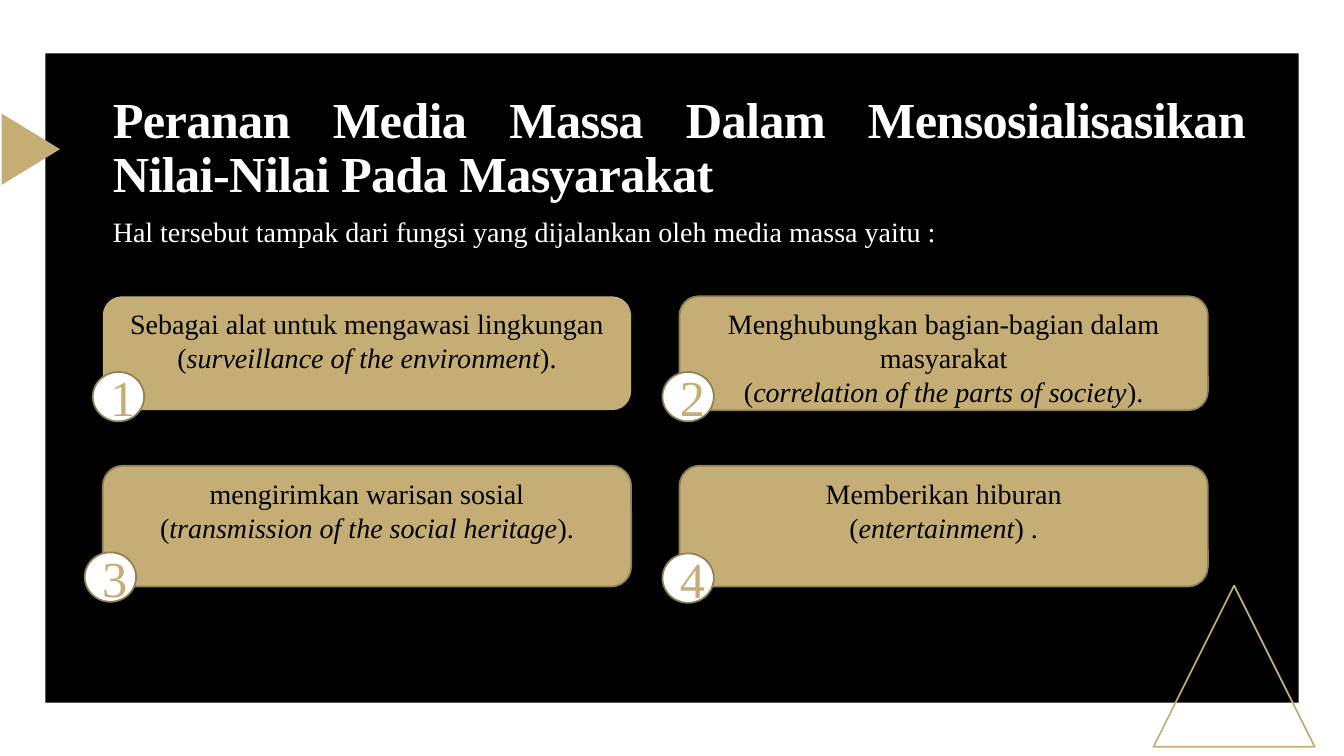
from pptx import Presentation
from pptx.dml.color import RGBColor
from pptx.enum.shapes import MSO_SHAPE
from pptx.enum.text import MSO_ANCHOR, MSO_AUTO_SIZE, PP_ALIGN
from pptx.util import Pt

PX = 9144  # 100 px to the inch
GOLD, DARK_GOLD, WHITE, BLACK = "C4AE75", "918157", "FFFFFF", "000000"


def add_shape(kind, left, top, width, height, fill=None, line=None):
    shape = slide.shapes.add_shape(kind, left * PX, top * PX, width * PX, height * PX)
    shape.shadow.inherit = False
    if fill:
        shape.fill.solid()
        shape.fill.fore_color.rgb = RGBColor.from_string(fill)
    else:
        shape.fill.background()
    if line:
        shape.line.color.rgb = RGBColor.from_string(line)
        shape.line.width = Pt(1.25)
    else:
        shape.line.fill.background()
    return shape


def write_text(shape, *lines, size=20, color=BLACK, bold=False, spacing=0,
               align=PP_ALIGN.CENTER, anchor=MSO_ANCHOR.TOP):
    """Write one paragraph per line; text between asterisks is italic."""
    frame = shape.text_frame
    frame.word_wrap = True
    frame.auto_size = MSO_AUTO_SIZE.NONE
    frame.vertical_anchor = anchor
    for index, line in enumerate(lines):
        paragraph = frame.add_paragraph() if index else frame.paragraphs[0]
        paragraph.alignment = align
        for part, text in enumerate(line.split("*")):
            run = paragraph.add_run()
            run.text = text
            run.font.name = "Times New Roman"
            run.font.size = Pt(size)
            run.font.bold = bold
            run.font.italic = part % 2 == 1
            run.font.color.rgb = RGBColor.from_string(color)
            if spacing:
                run.font._element.set("spc", str(spacing))


presentation = Presentation()
presentation.slide_width = 1333 * PX
presentation.slide_height = 750 * PX
slide = presentation.slides.add_slide(presentation.slide_layouts[5])

# Panel and triangles
add_shape(MSO_SHAPE.RECTANGLE, 45, 53, 1243, 644, fill=BLACK)
add_shape(MSO_SHAPE.ISOSCELES_TRIANGLE, 1144, 581, 160, 160, line=GOLD)
pointer = add_shape(MSO_SHAPE.ISOSCELES_TRIANGLE, -5, 119, 71, 58, fill=GOLD)
pointer.rotation = 90

# Title, brought in front of the panel
title = slide.shapes.title
slide.shapes._spTree.append(title._element)
title.left, title.top, title.width, title.height = 102 * PX, 98 * PX, 1143 * PX, 100 * PX
write_text(title, "Peranan Media Massa Dalam Mensosialisasikan Nilai-Nilai Pada Masyarakat",
           size=36, color=WHITE, bold=True, spacing=-50,
           align=PP_ALIGN.JUSTIFY, anchor=MSO_ANCHOR.MIDDLE)
title.text_frame.paragraphs[0].line_spacing = 0.9

introduction = slide.shapes.add_textbox(102 * PX, 208 * PX, 842 * PX, 44 * PX)
write_text(introduction, "Hal tersebut tampak dari fungsi yang dijalankan oleh media massa yaitu :",
           color=WHITE, align=PP_ALIGN.JUSTIFY)

# Four functions: text lines, card outline, badge position
functions = [
    (["Sebagai alat untuk mengawasi lingkungan (*surveillance of the environment*)."],
     None, (92, 369)),
    (["Menghubungkan bagian-bagian dalam masyarakat",
      "(*correlation of the parts of society*)."], DARK_GOLD, (657, 369)),
    (["mengirimkan warisan sosial", "(*transmission of the social heritage*)."],
     DARK_GOLD, (84, 548)),
    (["Memberikan hiburan", "(*entertainment*) ."], DARK_GOLD, (657, 549)),
]
card_rows = [(294, 113), (462, 120)]
for index, (lines, outline, badge_position) in enumerate(functions):
    row, column = divmod(index, 2)
    top, height = card_rows[row]
    card = add_shape(MSO_SHAPE.ROUNDED_RECTANGLE, 102 + column * 572, top, 524, height,
                     fill=GOLD, line=outline)
    write_text(card, *lines)
    badge = add_shape(MSO_SHAPE.OVAL, *badge_position, 51, 49, fill=WHITE, line=DARK_GOLD)
    write_text(badge, str(index + 1), size=36, color=GOLD, anchor=MSO_ANCHOR.MIDDLE)

presentation.save("out.pptx")
